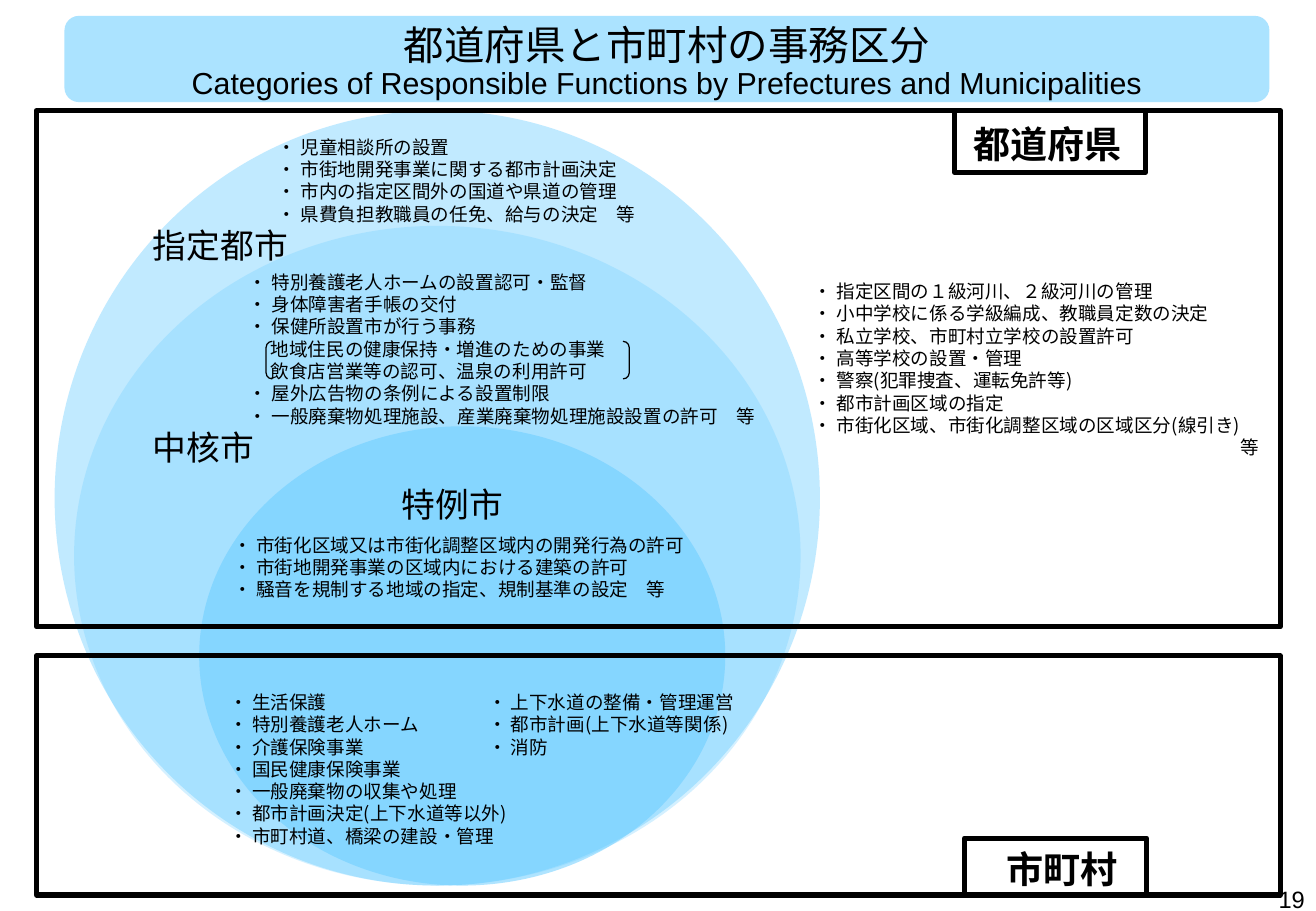
from lxml.etree import SubElement
from pptx import Presentation
from pptx.dml.color import RGBColor
from pptx.enum.shapes import MSO_SHAPE
from pptx.enum.text import MSO_ANCHOR, PP_ALIGN
from pptx.oxml.ns import qn
from pptx.util import Pt

BLACK = RGBColor(0x00, 0x00, 0x00)
SKY = RGBColor(0x66, 0xCC, 0xFF)
JAPANESE = "Noto Sans CJK JP"
LATIN = "Arial"
FRAME = {"margin_left": Pt(7.2), "margin_right": Pt(7.2), "margin_top": Pt(3.6),
         "margin_bottom": Pt(3.6), "vertical_anchor": MSO_ANCHOR.TOP, "word_wrap": True}
LIST_SIZE, LIST_PITCH = 11, 13.2

CITY_CIRCLES = [  # left, top, width, height, opacity in percent
    (32.4, 65.5, 453.6, 459.4, 40),
    (43.9, 133.9, 430.6, 391, 28),
    (118.1, 252.7, 311.8, 272.2, 52),
]
GOVERNMENT_FRAMES = [(21.6, 65.5, 737.3, 306), (21.6, 388.8, 737.3, 141.8)]
GOVERNMENT_NAMES = [  # name, place, left inset, line pitch
    ("都道府県", (565.9, 65.5, 113, 36.7), 11.2, 29),
    ("市町村", (571.7, 496.8, 108, 33.8), 25, 28),
]
CITY_NAMES = [("指定都市", 83.5, 128.2), ("中核市", 83.5, 247.7), ("特例市", 231.1, 281.5)]
FUNCTION_LISTS = [  # place, lines; a pair gives a line and its indent
    ((157.7, 77, 266.4, 60.5), [
        "・ 児童相談所の設置",
        "・ 市街地開発事業に関する都市計画決定",
        "・ 市内の指定区間外の国道や県道の管理",
        "・ 県費負担教職員の任免、給与の決定　等"]),
    ((140.4, 157, 374.4, 100.8), [
        "・ 特別養護老人ホームの設置認可・監督",
        "・ 身体障害者手帳の交付",
        "・ 保健所設置市が行う事務",
        ("地域住民の健康保持・増進のための事業", 13),
        ("飲食店営業等の認可、温泉の利用許可", 13),
        "・ 屋外広告物の条例による設置制限",
        "・ 一般廃棄物処理施設、産業廃棄物処理施設設置の許可　等"]),
    ((131.3, 312.7, 309.3, 47), [
        "・ 市街化区域又は市街化調整区域内の開発行為の許可",
        "・ 市街地開発事業の区域内における建築の許可",
        "・ 騒音を規制する地域の指定、規制基準の設定　等"]),
    ((475.2, 162.5, 289.4, 113.8), [
        "・ 指定区間の１級河川、２級河川の管理",
        "・ 小中学校に係る学級編成、教職員定数の決定",
        "・ 私立学校、市町村立学校の設置許可",
        "・ 高等学校の設置・管理",
        "・ 警察(犯罪捜査、運転免許等)",
        "・ 都市計画区域の指定",
        "・ 市街化区域、市街化調整区域の区域区分(線引き)",
        ("等", 253)]),
    ((128.9, 406.1, 215.3, 100.8), [
        "・ 生活保護",
        "・ 特別養護老人ホーム",
        "・ 介護保険事業",
        "・ 国民健康保険事業",
        "・ 一般廃棄物の収集や処理",
        "・ 都市計画決定(上下水道等以外)",
        "・ 市町村道、橋梁の建設・管理"]),
    ((282.2, 406.1, 221, 47.5), [
        "・ 上下水道の整備・管理運営",
        "・ 都市計画(上下水道等関係)",
        "・ 消防"]),
]


def set_all(target, values):
    for name, value in values.items():
        setattr(target, name, value)


class Painter:
    def __init__(self, page):
        self.page = page

    def shape(self, kind, place, opacity=None, line=None):
        """Draw a sky-blue shape of the given opacity, or an unfilled black outline."""
        shape = self.page.shapes.add_shape(kind, *map(Pt, place))
        shape.shadow.inherit = False
        if opacity is None:
            shape.fill.background()
        else:
            shape.fill.solid()
            shape.fill.fore_color.rgb = SKY
            color = shape.fill._xPr.find(".//" + qn("a:srgbClr"))
            SubElement(color, qn("a:alpha"), val=str(opacity * 1000))
        if line is None:
            shape.line.fill.background()
        else:
            shape.line.color.rgb = BLACK
            shape.line.width = Pt(line)
        return shape

    def text_box(self, place):
        return self.page.shapes.add_textbox(*map(Pt, place))

    def frame(self, box, **changes):
        set_all(box.text_frame, {**FRAME, **changes})

    def line(self, box, text, size, pitch=None, font=LATIN, bold=False,
             align=PP_ALIGN.LEFT, indent=0):
        """Add one paragraph; the first call fills the paragraph already there."""
        paras = box.text_frame.paragraphs
        para = paras[0] if not paras[0].runs else box.text_frame.add_paragraph()
        set_all(para, {"alignment": align, "line_spacing": Pt(pitch) if pitch else None})
        if indent:
            para._p.get_or_add_pPr().set("marL", str(Pt(indent)))
        span = para.add_run()
        span.text = text
        set_all(span.font, {"name": font, "size": Pt(size), "bold": bold})
        span.font.color.rgb = BLACK
        SubElement(span._r.get_or_add_rPr(), qn("a:ea"), typeface=JAPANESE)


def main():
    deck = Presentation()
    set_all(deck, {"slide_width": Pt(780), "slide_height": Pt(540)})
    painter = Painter(deck.slides.add_slide(deck.slide_layouts[6]))

    for *place, opacity in CITY_CIRCLES:
        painter.shape(MSO_SHAPE.OVAL, place, opacity)
    for place in GOVERNMENT_FRAMES:
        painter.shape(MSO_SHAPE.RECTANGLE, place, line=3)
    for name, place, inset, pitch in GOVERNMENT_NAMES:
        box = painter.shape(MSO_SHAPE.RECTANGLE, place, line=3)
        painter.frame(box, margin_left=Pt(inset))
        painter.line(box, name, 22, pitch, JAPANESE, bold=True)

    for place, lines in FUNCTION_LISTS:
        box = painter.text_box(place)
        painter.frame(box)
        for entry in lines:
            text, indent = (entry, 0) if isinstance(entry, str) else entry
            painter.line(box, text, LIST_SIZE, LIST_PITCH, JAPANESE, indent=indent)
    for name, left, top in CITY_NAMES:
        box = painter.text_box((left, top, 102.2, 31.7))
        painter.frame(box)
        painter.line(box, name, 20, 25.5)

    title = painter.shape(MSO_SHAPE.ROUNDED_RECTANGLE, (38.2, 9.4, 714.2, 51.1), 55)
    painter.frame(title, vertical_anchor=MSO_ANCHOR.MIDDLE)
    painter.line(title, "都道府県と市町村の事務区分", 24, 30, align=PP_ALIGN.CENTER)
    painter.line(title, "Categories of Responsible Functions by Prefectures and Municipalities",
                 18, 19, align=PP_ALIGN.CENTER)
    painter.shape(MSO_SHAPE.DOUBLE_BRACKET, (157.7, 202.3, 215.3, 22.3), line=0.75)

    number = painter.text_box((598.3, 521.3, 182.2, 18.7))
    painter.frame(number)
    painter.line(number, "19", 14, align=PP_ALIGN.RIGHT)
    deck.save("out.pptx")


if __name__ == "__main__":
    main()
